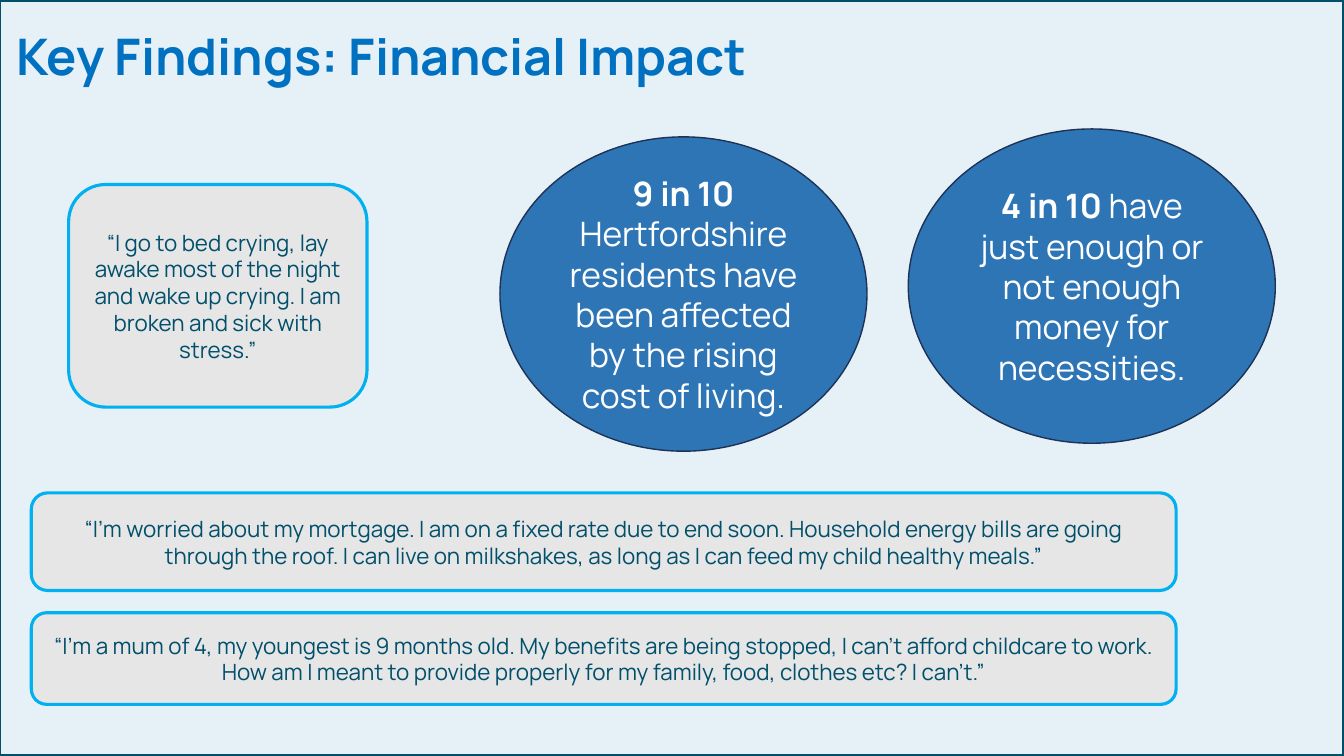
from dataclasses import dataclass

from pptx import Presentation
from pptx.dml.color import RGBColor
from pptx.enum.shapes import MSO_SHAPE
from pptx.enum.text import MSO_ANCHOR, MSO_AUTO_SIZE, PP_ALIGN
from pptx.shapes.autoshape import Shape
from pptx.slide import Slide
from pptx.text.text import _Paragraph
from pptx.util import Cm, Pt

RECTANGLE = MSO_SHAPE.RECTANGLE
ROUNDED = MSO_SHAPE.ROUNDED_RECTANGLE
OVAL = MSO_SHAPE.OVAL
TOP, MIDDLE = MSO_ANCHOR.TOP, MSO_ANCHOR.MIDDLE
LEFT, CENTER = PP_ALIGN.LEFT, PP_ALIGN.CENTER
NO_AUTOFIT = MSO_AUTO_SIZE.NONE

PALE_BLUE = RGBColor(0xE6, 0xF1, 0xF7)
TEAL = RGBColor(0x00, 0x4F, 0x6B)
TITLE_BLUE = RGBColor(0x00, 0x70, 0xC0)
BUBBLE_BLUE = RGBColor(0x2E, 0x75, 0xB6)
NAVY = RGBColor(0x1E, 0x32, 0x56)
SKY = RGBColor(0x00, 0xB0, 0xF0)
GREY = RGBColor(0xE7, 0xE6, 0xE6)
WHITE = RGBColor(0xFF, 0xFF, 0xFF)

FONT = "Manrope"
SLIDE_WIDTH, SLIDE_HEIGHT = 33.87, 19.05
BUBBLE_WIDTH, BUBBLE_HEIGHT = 9.25, 7.92


@dataclass(frozen=True)
class Box:
    """Position and size in centimetres."""
    left: float
    top: float
    width: float
    height: float


@dataclass(frozen=True)
class Statistic:
    left: float
    top: float
    share: str
    finding: str


@dataclass(frozen=True)
class Quote:
    box: Box
    words: str


STATISTICS = (
    Statistic(22.89, 3.25, "4 in 10 ",
              "have just enough or not enough money for necessities."),
    Statistic(12.6, 3.45, "9 in 10 ",
              "Hertfordshire residents have been affected by the rising cost of living."),
)

QUOTES = (
    Quote(Box(0.79, 12.42, 28.85, 2.46),
          "“I’m worried about my mortgage. I am on a fixed rate due to end soon. "
          "Household energy bills are going through the roof. I can live on "
          "milkshakes, as long as I can feed my child healthy meals.”"),
    Quote(Box(0.79, 15.44, 28.85, 2.31),
          "“I’m a mum of 4, my youngest is 9 months old. My benefits are being "
          "stopped, I can’t afford childcare to work. How am I meant to provide "
          "properly for my family, food, clothes etc? I can’t.”"),
    Quote(Box(1.73, 4.65, 7.52, 5.61),
          "“I go to bed crying, lay awake most of the night and wake up crying. "
          "I am broken and sick with stress.”"),
)


def add_run(paragraph: _Paragraph, text: str, size: float,
            color: RGBColor, bold: bool = False) -> None:
    run = paragraph.add_run()
    run.text = text
    run.font.name = FONT
    run.font.size = Pt(size)
    run.font.bold = bold
    run.font.color.rgb = color


def add_outlined(slide: Slide, kind: MSO_SHAPE, box: Box, line: RGBColor,
                 line_width: float, fill: RGBColor | None = None) -> Shape:
    shape = slide.shapes.add_shape(
        kind, Cm(box.left), Cm(box.top), Cm(box.width), Cm(box.height))
    shape.shadow.inherit = False
    if fill is None:
        shape.fill.background()
    else:
        shape.fill.solid()
        shape.fill.fore_color.rgb = fill
    shape.line.color.rgb = line
    shape.line.width = Pt(line_width)
    return shape


def centred_paragraph(shape: Shape) -> _Paragraph:
    frame = shape.text_frame
    frame.word_wrap = True
    frame.vertical_anchor = MIDDLE
    paragraph = frame.paragraphs[0]
    paragraph.alignment = CENTER
    return paragraph


def add_statistic(slide: Slide, statistic: Statistic) -> None:
    box = Box(statistic.left, statistic.top, BUBBLE_WIDTH, BUBBLE_HEIGHT)
    bubble = add_outlined(slide, OVAL, box, NAVY, 1, BUBBLE_BLUE)
    paragraph = centred_paragraph(bubble)
    add_run(paragraph, statistic.share, 24, WHITE, bold=True)
    add_run(paragraph, statistic.finding, 24, WHITE)


def add_quote(slide: Slide, quote: Quote) -> None:
    card = add_outlined(slide, ROUNDED, quote.box, SKY, 2.25, GREY)
    add_run(centred_paragraph(card), quote.words, 16, TEAL)


def set_title(slide: Slide, text: str) -> None:
    title = slide.shapes.title
    title.left, title.top = Cm(0), Cm(0.33)
    title.width, title.height = Cm(21.56), Cm(2.13)
    frame = title.text_frame
    frame.word_wrap = True
    frame.auto_size = NO_AUTOFIT
    frame.vertical_anchor = TOP
    frame.margin_left = frame.margin_right = Cm(0.41)
    frame.margin_top = frame.margin_bottom = Cm(0.3)
    paragraph = frame.paragraphs[0]
    paragraph.alignment = LEFT
    add_run(paragraph, text, 36, TITLE_BLUE, bold=True)


def main() -> None:
    deck = Presentation()
    deck.slide_width, deck.slide_height = Cm(SLIDE_WIDTH), Cm(SLIDE_HEIGHT)
    slide = deck.slides.add_slide(deck.slide_layouts.get_by_name("Title Only"))
    slide.background.fill.solid()
    slide.background.fill.fore_color.rgb = PALE_BLUE

    add_outlined(slide, RECTANGLE, Box(-0.03, 0, 33.91, SLIDE_HEIGHT), TEAL, 3)
    set_title(slide, "Key Findings: Financial Impact")
    for statistic in STATISTICS:
        add_statistic(slide, statistic)
    for quote in QUOTES:
        add_quote(slide, quote)

    deck.save("out.pptx")


if __name__ == "__main__":
    main()
